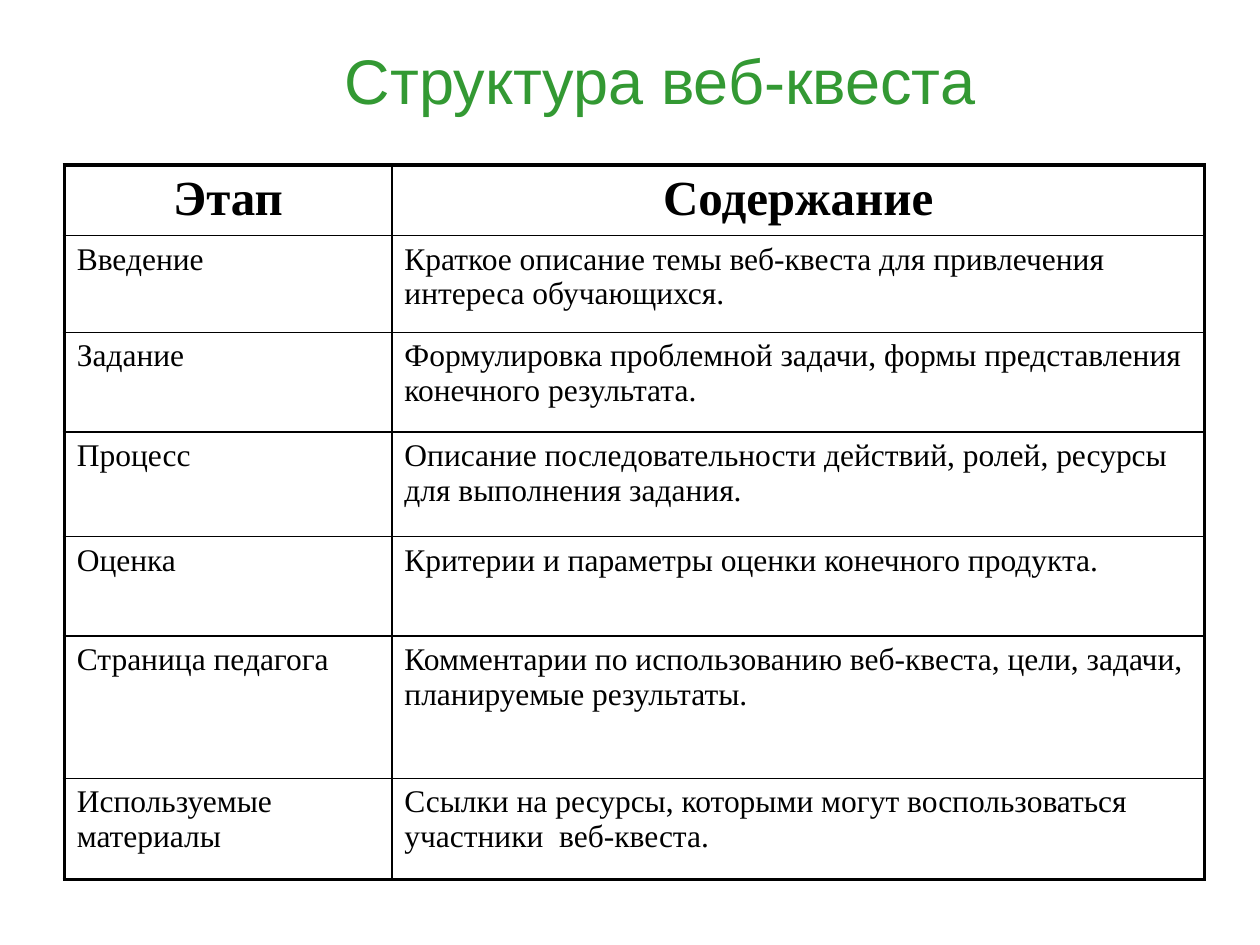
from dataclasses import dataclass

from lxml.etree import SubElement as Sub
from pptx import Presentation
from pptx.dml.color import RGBColor as Rgb
from pptx.enum.text import MSO_ANCHOR as Anchor, MSO_AUTO_SIZE as Fit
from pptx.enum.text import PP_ALIGN as Align
from pptx.oxml.ns import qn
from pptx.util import Inches, Pt


@dataclass(frozen=True)
class Theme:
    ink: str = "000000"
    green: str = "339933"
    paper: str = "FFFFFF"
    sans: str = "Arial"
    serif: str = "Times New Roman"
    title: int = 36
    head: int = 28
    body: int = 18
    thick: float = 2.25
    thin: float = 1


class Deck:
    def __init__(self, theme, wide, high):
        self.theme = theme
        self.show = Presentation()
        self.show.slide_width = Inches(wide)
        self.show.slide_height = Inches(high)
        self.slide = self.show.slides.add_slide(self.show.slide_layouts[6])

    def area(self, x, y, w, h):
        """Turn shares of the slide into lengths."""
        wide, high = self.show.slide_width, self.show.slide_height
        return int(x * wide), int(y * high), int(w * wide), int(h * high)

    def style(self, para, face, size, color, bold=False, align=Align.LEFT):
        font = para.font
        font.name, font.size, font.bold = face, Pt(size), bold
        font.color.rgb = Rgb.from_string(color)
        para.alignment = align

    def title(self, text, *share):
        frame = self.slide.shapes.add_textbox(*self.area(*share)).text_frame
        # The line nearly fills the box, so it gets the full width
        frame.margin_left = frame.margin_right = 0
        frame.word_wrap = False
        frame.auto_size = Fit.SHAPE_TO_FIT_TEXT
        frame.text = text
        look = self.theme
        self.style(frame.paragraphs[0], look.sans, look.title, look.green,
                   align=Align.CENTER)

    def border(self, cell, **edges):
        props = cell._tc.get_or_add_tcPr()
        for spot, (side, outer) in enumerate(edges.items()):
            width = self.theme.thick if outer else self.theme.thin
            line = props.makeelement(qn(f"a:ln{side}"), {"w": str(Pt(width))})
            fill = Sub(line, qn("a:solidFill"))
            Sub(fill, qn("a:srgbClr"), val=self.theme.ink)
            props.insert(spot, line)

    def table(self, rows, cols, highs, x, y):
        look = self.theme
        box = self.area(x, y, sum(cols), sum(highs))
        grid = self.slide.shapes.add_table(len(rows), len(cols), *box).table
        for col, share in zip(grid.columns, cols):
            col.width = int(share * self.show.slide_width)
        for row, share in zip(grid.rows, highs):
            row.height = int(share * self.show.slide_height)
        for r, row in enumerate(rows):
            for c, text in enumerate(row):
                cell = grid.cell(r, c)
                cell.text = text
                cell.vertical_anchor = Anchor.TOP
                cell.fill.solid()
                cell.fill.fore_color.rgb = Rgb.from_string(look.paper)
                top = r == 0
                self.style(cell.text_frame.paragraphs[0], look.serif,
                           look.head if top else look.body, look.ink, top,
                           Align.CENTER if top else Align.LEFT)
                self.border(cell, L=c == 0, R=c == len(cols) - 1,
                            T=top, B=r == len(rows) - 1)

    def save(self):
        self.show.save("out.pptx")


ROWS = [
    ("Этап", "Содержание"),
    ("Введение", "Краткое описание темы веб-квеста для привлечения "
     "интереса обучающихся."),
    ("Задание", "Формулировка проблемной задачи, формы представления "
     "конечного результата."),
    ("Процесс", "Описание последовательности действий, ролей, ресурсы "
     "для выполнения задания."),
    ("Оценка", "Критерии и параметры оценки конечного продукта."),
    ("Страница педагога", "Комментарии по использованию веб-квеста, цели, "
     "задачи, планируемые результаты."),
    ("Используемые материалы", "Ссылки на ресурсы, которыми могут "
     "воспользоваться участники  веб-квеста."),
]


def main():
    wide, high = 10, 7.5
    deck = Deck(Theme(), wide, high)

    # Table of stages
    cols = [w / wide for w in (2.6, 6.45)]
    highs = [h / high for h in (0.56, 0.77, 0.79, 0.83, 0.79, 1.13, 0.8)]
    deck.table(ROWS, cols, highs, 0.51 / wide, 1.31 / high)

    # Heading
    deck.title("Структура веб-квеста",
               2.72 / wide, 0.28 / high, 5.04 / wide, 0.71 / high)
    deck.save()


if __name__ == "__main__":
    main()
